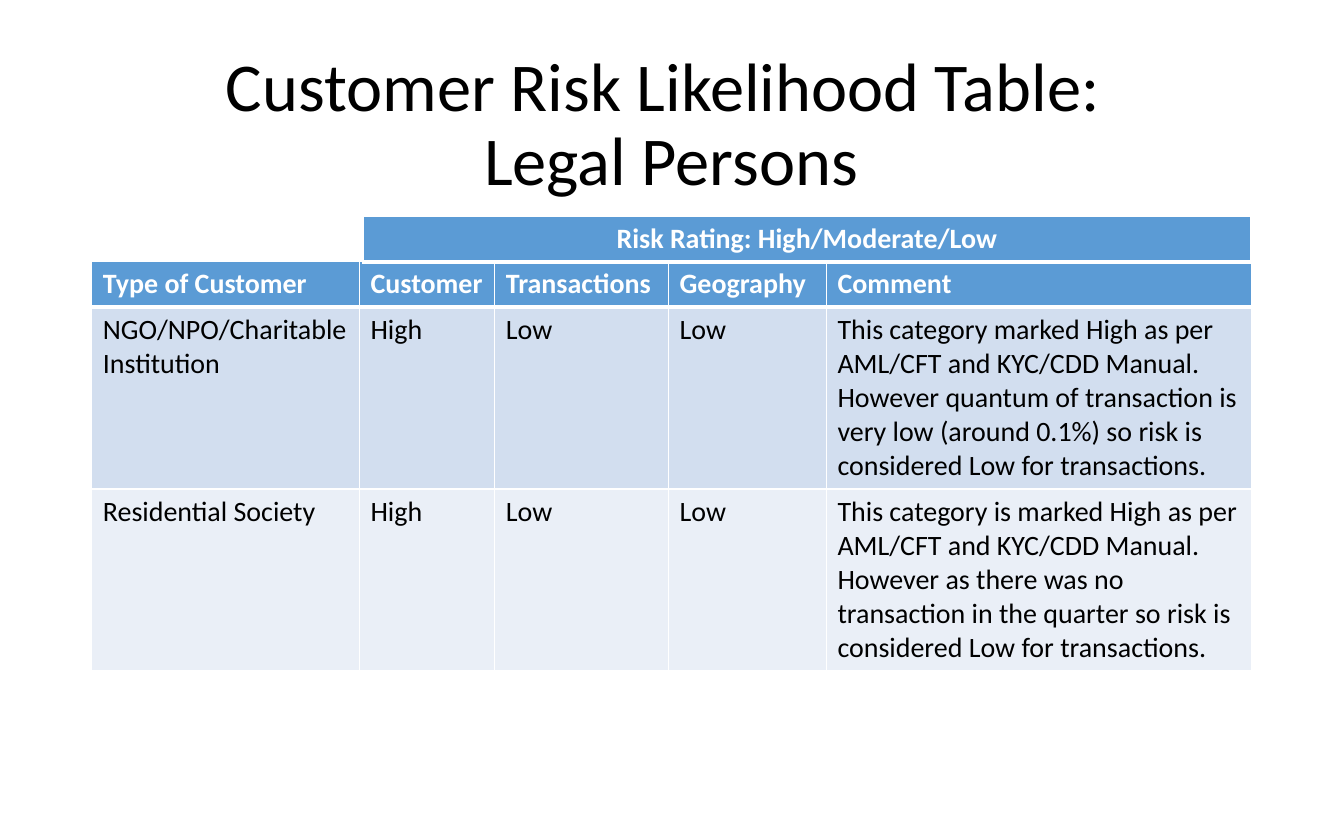
"""Build the customer risk likelihood slide for legal persons."""
from lxml.etree import SubElement
from pptx import Presentation
from pptx.dml.color import RGBColor
from pptx.enum.text import MSO_ANCHOR, MSO_AUTO_SIZE, PP_ALIGN
from pptx.oxml.ns import qn
from pptx.util import Cm, Pt

WHITE, BLACK, BLUE = "FFFFFF", "000000", "5B9BD5"
HEADER_HEIGHT, BODY_HEIGHT = 1.04, 4.06


def color(hex_value):
    return RGBColor.from_string(hex_value)


def format_cell(cell, text, fill, text_color, bold, top, bottom):
    properties = cell._tc.get_or_add_tcPr()
    for side, width in (("L", 1), ("R", 1), ("T", top), ("B", bottom)):
        line = SubElement(properties, qn(f"a:ln{side}"), w=str(Pt(width)))
        line_fill = SubElement(line, qn("a:solidFill"))
        SubElement(line_fill, qn("a:srgbClr"), val=WHITE)
    cell.fill.solid()
    cell.fill.fore_color.rgb = color(fill)
    cell.text_frame.text = text
    font = cell.text_frame.paragraphs[0].runs[0].font
    font.name, font.size, font.bold = "Calibri", Pt(18), bold
    font.color.rgb = color(text_color)


presentation = Presentation()
presentation.slide_width, presentation.slide_height = Cm(30.48), Cm(19.05)
slide = presentation.slides.add_slide(presentation.slide_layouts[5])

title = slide.shapes.title
title.left, title.top, title.width, title.height = Cm(2.08), Cm(1.02), Cm(26.29), Cm(3.68)
title.text_frame.text = "Customer Risk Likelihood Table: \vLegal Persons"
title.text_frame.auto_size = MSO_AUTO_SIZE.NONE
title.text_frame.vertical_anchor = MSO_ANCHOR.MIDDLE
title_paragraph = title.text_frame.paragraphs[0]
title_paragraph.alignment = PP_ALIGN.CENTER
title_paragraph.line_spacing = 0.9
for run in title_paragraph.runs:
    run.font.name, run.font.size = "Calibri", Pt(44)
    run.font.color.rgb = color(BLACK)

risk_rows = [
    ["Type of Customer", "Customer", "Transactions", "Geography", "Comment"],
    ["NGO/NPO/Charitable Institution", "High", "Low", "Low",
     "This category marked High as per AML/CFT and KYC/CDD Manual. However quantum of "
     "transaction is very low (around 0.1%) so risk is considered Low for transactions."],
    ["Residential Society", "High", "Low", "Low",
     "This category is marked High as per AML/CFT and KYC/CDD Manual. However as there was no "
     "transaction in the quarter so risk is considered Low for transactions."],
]
column_widths = [6.07, 3.07, 3.94, 3.58, 9.65]
row_styles = [
    (BLUE, WHITE, True, 1, 3),
    ("D2DEEF", BLACK, False, 3, 1),
    ("EAEFF7", BLACK, False, 1, 1),
]
row_heights = [HEADER_HEIGHT, BODY_HEIGHT, BODY_HEIGHT]

risk_table = slide.shapes.add_table(
    len(risk_rows), len(column_widths), Cm(2.08), Cm(5.92),
    Cm(sum(column_widths)), Cm(sum(row_heights))).table
for column, width in zip(risk_table.columns, column_widths):
    column.width = Cm(width)
for row, height, texts, style in zip(risk_table.rows, row_heights, risk_rows, row_styles):
    row.height = Cm(height)
    for cell, text in zip(row.cells, texts):
        format_cell(cell, text, *style)

rating_table = slide.shapes.add_table(
    1, 1, Cm(8.23), Cm(4.9), Cm(20.14), Cm(HEADER_HEIGHT)).table
rating_cell = rating_table.cell(0, 0)
format_cell(rating_cell, "Risk Rating: High/Moderate/Low", *row_styles[0])
rating_cell.text_frame.paragraphs[0].alignment = PP_ALIGN.CENTER

presentation.save("out.pptx")
